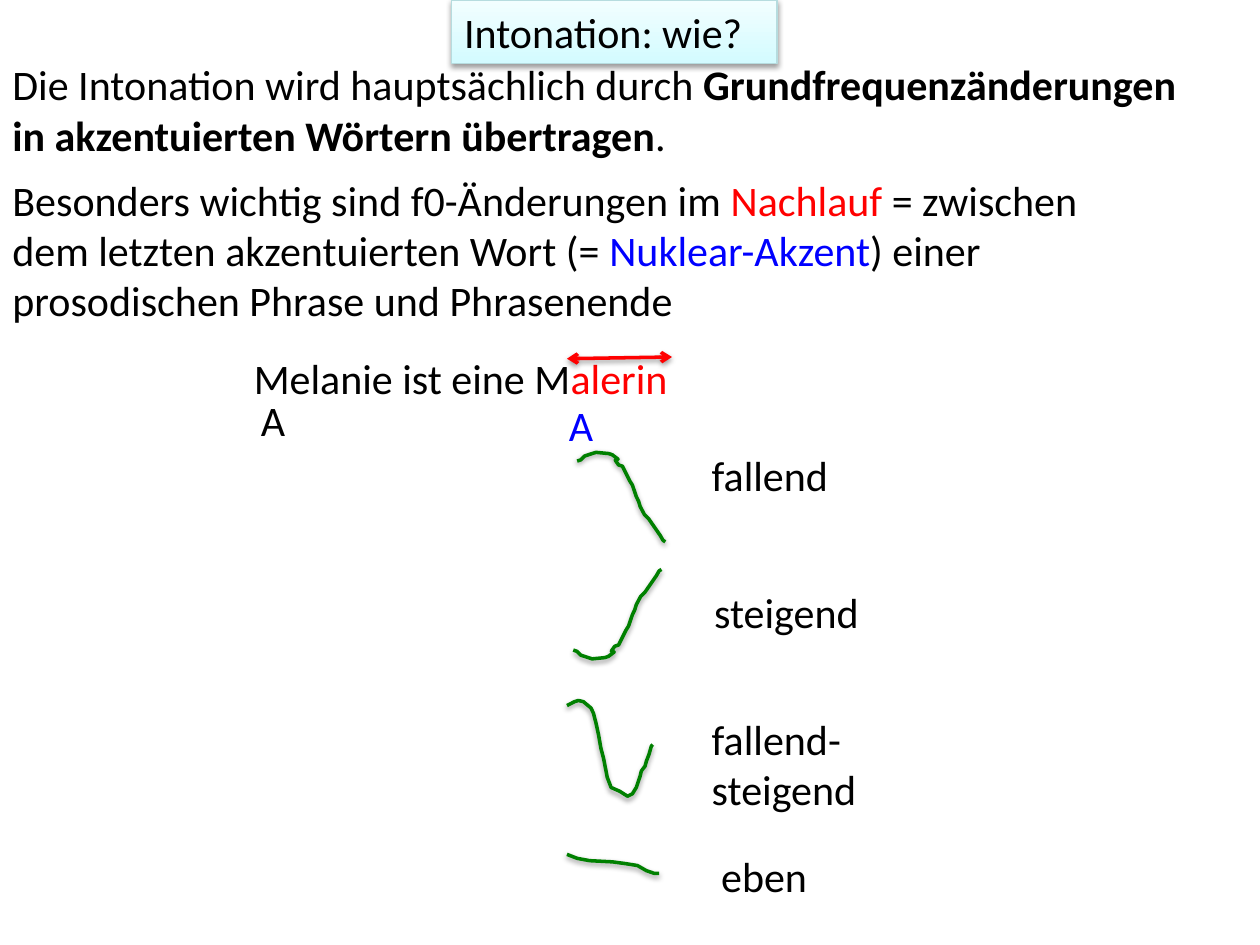
from lxml import etree
from pptx import Presentation
from pptx.dml.color import RGBColor
from pptx.enum import shapes, text
from pptx.oxml import ns
from pptx.util import Pt

BLACK = RGBColor(0x00, 0x00, 0x00)
RED = RGBColor(0xFF, 0x00, 0x00)
BLUE = RGBColor(0x00, 0x00, 0xFF)
GREEN = RGBColor(0x00, 0x80, 0x00)
TITLE_DARK = RGBColor(0xD3, 0xFB, 0xFF)
TITLE_LIGHT = RGBColor(0xF2, 0xFE, 0xFF)
TITLE_LINE = RGBColor(0xB6, 0xDC, 0xDF)


def fill_text(sp, runs):
    tf = sp.text_frame
    tf.word_wrap = True
    tf.vertical_anchor = text.MSO_ANCHOR.TOP
    p = tf.paragraphs[0]
    p.alignment = text.PP_ALIGN.LEFT
    for wording, color, bold in runs:
        r = p.add_run()
        r.text = wording
        r.font.name = "Calibri"
        r.font.size = Pt(24)
        r.font.bold = bold
        r.font.color.rgb = color


def outline(sp, color, width):
    """Set the line, then the soft drop shadow that follows it in the XML."""
    sp.line.color.rgb = color
    sp.line.width = Pt(width)
    effects = etree.SubElement(sp._element.spPr, ns.qn("a:effectLst"))
    shadow = etree.SubElement(
        effects, ns.qn("a:outerShdw"), blurRad=str(Pt(3.1)),
        dist=str(Pt(1.6)), dir="5400000", rotWithShape="0")
    black = etree.SubElement(shadow, ns.qn("a:srgbClr"), val="000000")
    etree.SubElement(black, ns.qn("a:alpha"), val="38000")


prs = Presentation()
prs.slide_width, prs.slide_height = Pt(720), Pt(540)
s = prs.slides.add_slide(prs.slide_layouts[5])

# Title
title = s.shapes.title
title.left, title.top, title.width, title.height = Pt(258), Pt(0), Pt(186), Pt(36.5)
title.fill.gradient()
title.fill.gradient_angle = 90
for stop, color in zip(title.fill.gradient_stops, (TITLE_DARK, TITLE_LIGHT)):
    stop.color.rgb = color
outline(title, TITLE_LINE, 0.75)
fill_text(title, [("Intonation: wie?", BLACK, False)])

# Explanation, example sentence with its accents, and contour labels
text_boxes = [
    (0, 30, 702, 65.5, [
        ("Die Intonation wird hauptsächlich durch ", BLACK, False),
        ("Grundfrequenzänderungen in akzentuierten Wörtern übertragen", BLACK, True),
        (".", BLACK, False)]),
    (0, 96, 666, 94.5, [
        ("Besonders wichtig sind f0-Änderungen im ", BLACK, False),
        ("Nachlauf ", RED, False),
        ("= zwischen dem letzten akzentuierten Wort (= ", BLACK, False),
        ("Nuklear-Akzent", BLUE, False),
        (") einer prosodischen Phrase und Phrasenende", BLACK, False)]),
    (138, 198, 282, 36.5, [
        ("Melanie ist eine M", BLACK, False), ("alerin", RED, False)]),
    (142, 222, 29, 36.5, [("A", BLACK, False)]),
    (318, 225, 34, 36.5, [("A", BLUE, False)]),
    (399.6, 253.5, 122, 36.5, [("fallend", BLACK, False)]),
    (401, 331.5, 121, 36.5, [("steigend", BLACK, False)]),
    (399.6, 404, 140, 65.5, [("fallend-steigend", BLACK, False)]),
    (405, 482.5, 68, 36.5, [("eben", BLACK, False)]),
]
for left, top, width, height, runs in text_boxes:
    box = s.shapes.add_textbox(Pt(left), Pt(top), Pt(width), Pt(height))
    fill_text(box, runs)

# Double arrow over the stretch after the nuclear accent
arrow = s.shapes.add_connector(
    shapes.MSO_CONNECTOR.STRAIGHT, Pt(324), Pt(205), Pt(384), Pt(204))
outline(arrow, RED, 2)
for end in ("a:headEnd", "a:tailEnd"):
    etree.SubElement(arrow.line._get_or_add_ln(), ns.qn(end), type="arrow")

# Pitch contours; the rising one is the falling one turned upside down
falling = [
    (329.8, 263.5), (331.9, 262.8), (334.1, 260.6), (338.4, 259.2),
    (340.6, 258.5), (347.8, 259.2), (349.9, 259.9), (353.2, 262.4),
    (351.6, 263), (353.5, 265.7), (355.7, 266.4), (360, 275),
    (361.4, 277.2), (363.6, 283.7), (365, 286.6), (365.8, 289.4),
    (368.3, 294.1), (370.8, 296.6), (377.3, 306), (378.9, 308.8), (380.2, 309.6)]
rising = [(x - 2.2, 635 - y) for x, y in falling]
falling_rising = [
    (324, 403.2), (328.3, 401), (330.5, 400.3), (333.4, 401), (337.7, 404.6),
    (339.1, 407.5), (340.6, 413.3), (342, 419.8), (343.4, 427.7),
    (344.9, 433.4), (347, 444.2), (349.2, 450), (354.2, 452.2), (358.6, 455),
    (361.4, 453.6), (363.6, 450), (365.8, 443.5), (366.5, 440.6),
    (368.6, 437.8), (369.4, 434.9), (370.8, 431.3), (372.2, 426.4), (373, 425.5)]
level = [
    (324, 488.2), (329.9, 490.5), (337, 491.8), (350, 492.5), (357.4, 493.5),
    (364.3, 494.6), (369.4, 497.5), (373.7, 499), (376.6, 499)]
for contour in (falling, rising, falling_rising, level):
    tenths = [(10 * x, 10 * y) for x, y in contour]
    builder = s.shapes.build_freeform(*tenths[0], scale=Pt(0.1))
    builder.add_line_segments(tenths[1:], close=False)
    curve = builder.convert_to_shape()
    curve.fill.background()
    outline(curve, GREEN, 2)

prs.save("out.pptx")
